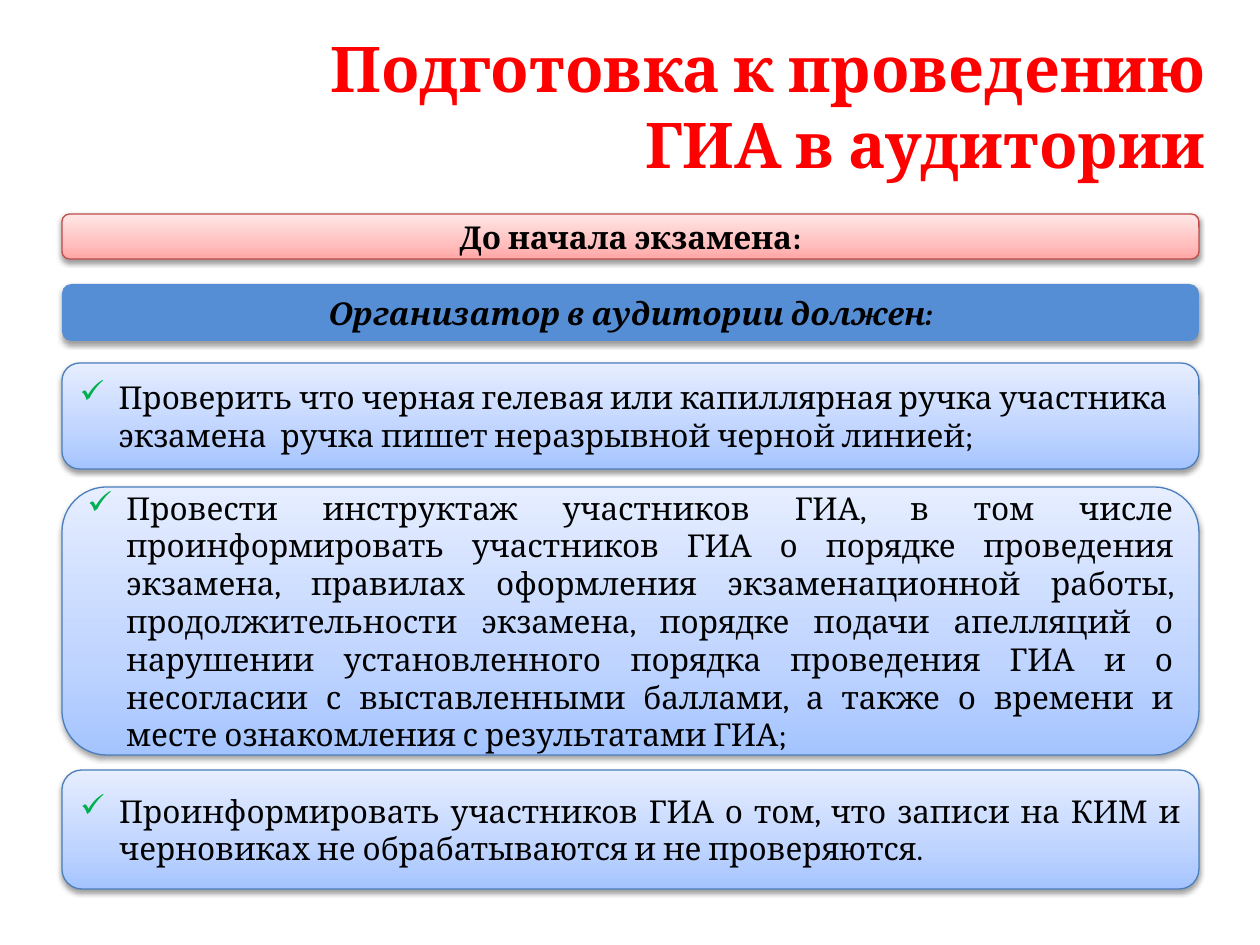
from copy import deepcopy

from lxml import etree
from pptx import Presentation
from pptx.dml.color import RGBColor
from pptx.enum.shapes import MSO_SHAPE as SHAPE
from pptx.enum.text import MSO_ANCHOR as ANCHOR, PP_ALIGN as ALIGN
from pptx.oxml.ns import qn
from pptx.util import Emu, Pt

PX = 914400 / 126
FONT = "Cambria"
BLACK = RGBColor(0x00, 0x00, 0x00)
RED = RGBColor(0xFF, 0x00, 0x00)
GREEN = RGBColor(0x00, 0xB0, 0x50)
BLUE = RGBColor(0x55, 0x8E, 0xD5)
BLUE_LINE = RGBColor(0x4B, 0x7E, 0xBC)
RED_LINE = RGBColor(0xBF, 0x4C, 0x48)
BLUE_STOPS = (RGBColor(0xA4, 0xC4, 0xFF), RGBColor(0xBF, 0xD4, 0xFF), RGBColor(0xE6, 0xEE, 0xFF))
RED_STOPS = (RGBColor(0xFF, 0xA6, 0xA5), RGBColor(0xFF, 0xC0, 0xBF), RGBColor(0xFF, 0xE7, 0xE7))
STOP_POSITIONS = (0, 0.35, 1)

LEFT, WIDTH = 62, 1137
DUTIES = [
    (363, 106, ALIGN.LEFT,
     "Проверить что черная гелевая или капиллярная ручка участника экзамена  ручка пишет "
     "неразрывной черной линией;"),
    (487, 268, ALIGN.JUSTIFY,
     "Провести инструктаж участников ГИА, в том числе проинформировать участников ГИА о порядке "
     "проведения экзамена, правилах оформления экзаменационной работы, продолжительности экзамена, "
     "порядке подачи апелляций о нарушении установленного порядка проведения ГИА и о несогласии "
     "с выставленными баллами, а также о времени и месте ознакомления с результатами ГИА;"),
    (770, 119, ALIGN.JUSTIFY,
     "Проинформировать участников ГИА о том, что записи на КИМ и черновиках не обрабатываются "
     "и не проверяются."),
]


def px(n):
    return Emu(round(n * PX))


def add_sub(parent, tag, **attrs):
    return etree.SubElement(parent, qn(tag), {k: str(v) for k, v in attrs.items()})


class Deck:
    def __init__(self, width, height):
        self.prs = Presentation()
        self.prs.slide_width, self.prs.slide_height = px(width), px(height)
        self.slide = self.prs.slides.add_slide(self.prs.slide_layouts[6])

    def text(self, s, text, size, color, align, bold=False, italic=False, check=False):
        tf = s.text_frame
        tf.word_wrap = True
        tf.vertical_anchor = ANCHOR.MIDDLE
        p = tf.paragraphs[0]
        p.text = text
        p.alignment = align
        if check:
            self.check_mark(p)
        font = p.font
        font.name, font.size, font.bold, font.italic = FONT, Pt(size), bold, italic
        font.color.rgb = color

    def check_mark(self, p):
        pPr = p._p.get_or_add_pPr()
        indent = px(39)
        pPr.set("marL", str(indent))
        pPr.set("indent", str(-indent))
        add_sub(add_sub(pPr, "a:buClr"), "a:srgbClr", val=GREEN)
        add_sub(pPr, "a:buChar", char="✓")

    def title(self, x, y, w, h, text):
        s = self.slide.shapes.add_textbox(px(x), px(y), px(w), px(h))
        self.text(s, text, 36, RED, ALIGN.RIGHT, bold=True)

    def gradient(self, fill, colors):
        """Fill upwards from the first colour to the last."""
        fill.gradient()
        fill.gradient_angle = 90
        last = fill._xPr.find(".//" + qn("a:gsLst"))[-1]
        last.addnext(deepcopy(last))
        for stop, color, position in zip(fill.gradient_stops, colors, STOP_POSITIONS):
            stop.color.rgb = color
            stop.position = position

    def drop_shadow(self, s):
        s.shadow.inherit = False
        effects = s._element.spPr.find(qn("a:effectLst"))
        shadow = add_sub(effects, "a:outerShdw", blurRad=Pt(3.1), dist=Pt(1.6),
                         dir=5400000, rotWithShape=0)
        add_sub(add_sub(shadow, "a:srgbClr", val=BLACK), "a:alpha", val=38000)

    def panel(self, y, h, text, fill, line=None, align=ALIGN.CENTER, **style):
        s = self.slide.shapes.add_shape(SHAPE.ROUNDED_RECTANGLE, px(LEFT), px(y), px(WIDTH), px(h))
        if isinstance(fill, RGBColor):
            s.fill.solid()
            s.fill.fore_color.rgb = fill
        else:
            self.gradient(s.fill, fill)
        if line is None:
            s.line.fill.background()
        else:
            s.line.color.rgb = line
            s.line.width = Pt(0.75)
        self.drop_shadow(s)
        self.text(s, text, 18, BLACK, align, **style)


def main():
    deck = Deck(1260, 945)
    deck.title(84, 26, 1134, 158, "Подготовка к проведению\vГИА в аудитории")
    deck.panel(214, 45, "До начала экзамена:", RED_STOPS, RED_LINE, bold=True)
    deck.panel(284, 57, "Организатор в аудитории должен:", BLUE, bold=True, italic=True)
    for y, h, align, text in DUTIES:
        deck.panel(y, h, text, BLUE_STOPS, BLUE_LINE, align, check=True)
    deck.prs.save("out.pptx")


if __name__ == "__main__":
    main()
